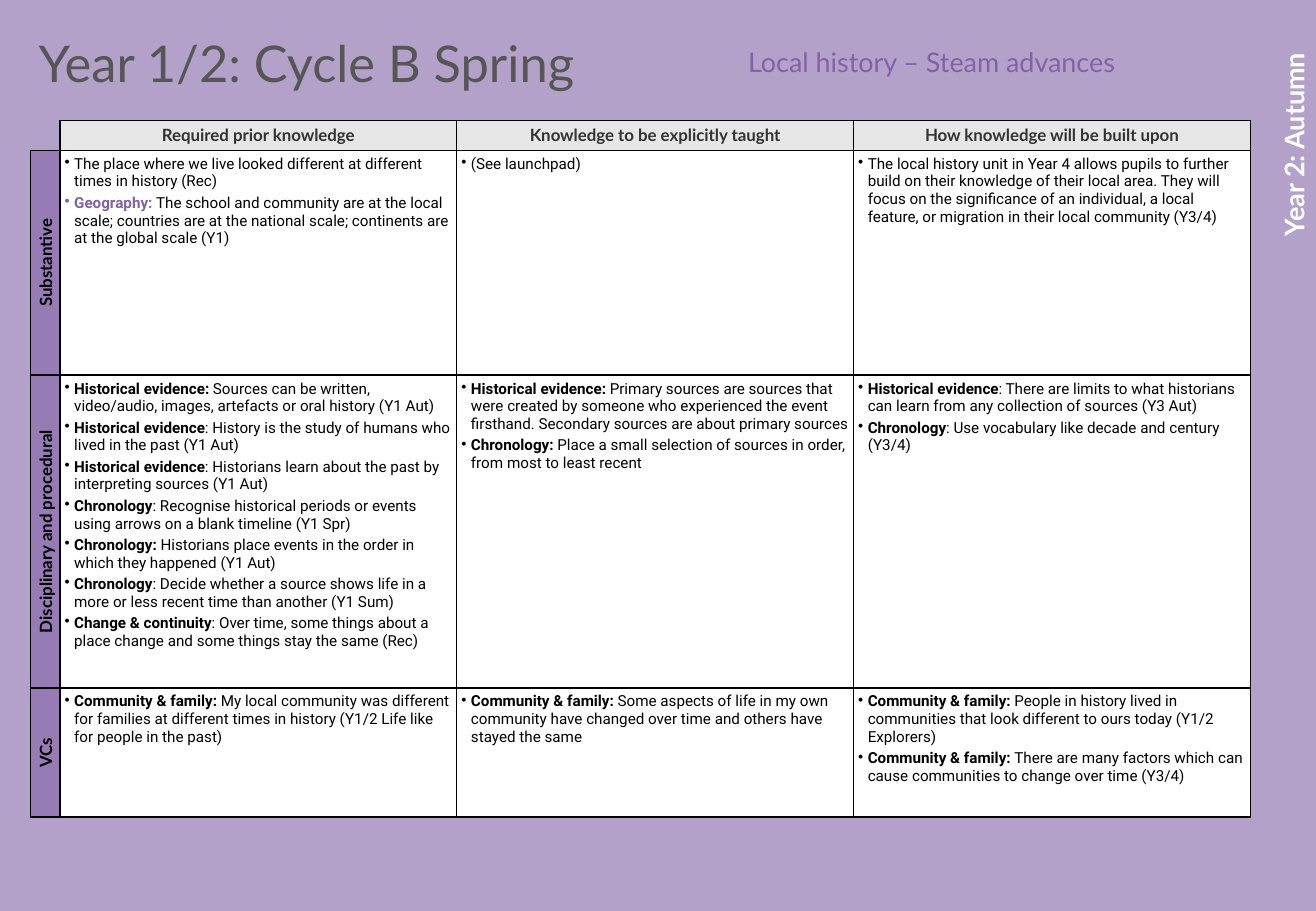
from lxml import etree
from pptx import Presentation
from pptx.dml.color import RGBColor
from pptx.enum.text import MSO_ANCHOR, PP_ALIGN
from pptx.oxml.ns import qn
from pptx.util import Pt

LEFT, CENTER, RIGHT = PP_ALIGN.LEFT, PP_ALIGN.CENTER, PP_ALIGN.RIGHT
MIDDLE = MSO_ANCHOR.MIDDLE

LILAC = RGBColor(0xB4, 0xA1, 0xCA)
PURPLE = RGBColor(0x82, 0x62, 0xA6)
TITLE_GREY = RGBColor(0x56, 0x56, 0x56)
HEADER_GREY = RGBColor(0x32, 0x32, 0x32)
HEADER_FILL = RGBColor(0xE6, 0xE6, 0xE6)
WHITE = RGBColor(0xFF, 0xFF, 0xFF)
BLACK = RGBColor(0, 0, 0)

CELL_MARGIN = Pt(2.83)
BULLET_INDENT = Pt(5.67)

# text, (left, top, width, height), rotation, alignment, size, colour, bold
HEADINGS = [
    ("Year 1/2: Cycle B Spring", (15.84, 18.72, 360.72, 36), 0, LEFT, 30, TITLE_GREY, False),
    ("Year 2: Autumn", (681.12, 73.44, 171.36, 24.48), 270, CENTER, 16, WHITE, True),
    ("Local history – Steam advances", (390.24, 18.72, 277.92, 36), 0, RIGHT, 16, PURPLE, False),
]

COLUMN_TITLES = ["Required prior knowledge", "Knowledge to be explicitly taught",
                 "How knowledge will be built upon"]

# strand, row height, three columns of (bold lead-in, statement)
STRANDS = [
    ("Substantive", 133.3, [
        [("", "The place where we live looked different at different times in history (Rec)"),
         ("Geography: ", "The school and community are at the local scale; countries are at the "
                         "national scale; continents are at the global scale (Y1)")],
        [("", "(See launchpad)")],
        [("", "The local history unit in Year 4 allows pupils to further build on their knowledge "
              "of their local area. They will focus on the significance of an individual, a local "
              "feature, or migration in their local community (Y3/4)")],
    ]),
    ("Disciplinary and procedural", 185.5, [
        [("Historical evidence: ", "Sources can be written, video/audio, images, artefacts or "
                                   "oral history (Y1 Aut)"),
         ("Historical evidence", ": History is the study of humans who lived in the past (Y1 Aut)"),
         ("Historical evidence", ": Historians learn about the past by interpreting sources (Y1 Aut)"),
         ("Chronology", ": Recognise historical periods or events using arrows on a blank "
                        "timeline (Y1 Spr)"),
         ("Chronology: ", "Historians place events in the order in which they happened (Y1 Aut)"),
         ("Chronology", ": Decide whether a source shows life in a more or less recent time than "
                        "another (Y1 Sum)"),
         ("Change & continuity", ": Over time, some things about a place change and some things "
                                 "stay the same (Rec)")],
        [("Historical evidence: ", "Primary sources are sources that were created by someone who "
                                   "experienced the event firsthand. Secondary sources are about "
                                   "primary sources"),
         ("Chronology: ", "Place a small selection of sources in order, from most to least recent")],
        [("Historical evidence", ": There are limits to what historians can learn from any "
                                 "collection of sources (Y3 Aut)"),
         ("Chronology", ": Use vocabulary like decade and century (Y3/4)")],
    ]),
    ("VCs", 76.5, [
        [("Community & family: ", "My local community was different for families at different "
                                  "times in history (Y1/2 Life like for people in the past)")],
        [("Community & family: ", "Some aspects of life in my own community have changed over "
                                  "time and others have stayed the same")],
        [("Community & family: ", "People in history lived in communities that look different to "
                                  "ours today (Y1/2 Explorers)"),
         ("Community & family: ", "There are many factors which can cause communities to change "
                                  "over time (Y3/4)")],
    ]),
]


def style_run(run, font_name, size, colour, bold):
    run.font.name = font_name
    run.font.size = Pt(size)
    run.font.color.rgb = colour
    run.font.bold = bold


def fill_label(cell, label, colour):
    """Write a centred bold row or column label."""
    cell.text_frame.text = label
    cell.vertical_anchor = MIDDLE
    paragraph = cell.text_frame.paragraphs[0]
    paragraph.alignment = CENTER
    style_run(paragraph.runs[0], "Lato", 10, colour, True)


prs = Presentation()
prs.slide_width, prs.slide_height = Pt(780), Pt(540)
slide = prs.slides.add_slide(prs.slide_layouts[6])
slide.background.fill.solid()
slide.background.fill.fore_color.rgb = LILAC

for text, place, rotation, alignment, size, colour, bold in HEADINGS:
    heading = slide.shapes.add_textbox(*[Pt(length) for length in place])
    heading.rotation = rotation
    frame = heading.text_frame
    frame.word_wrap = True
    frame.vertical_anchor = MIDDLE
    frame.text = text
    frame.paragraphs[0].alignment = alignment
    style_run(frame.paragraphs[0].runs[0], "Lato", size, colour, bold)

column_widths = [17.3] + [235.2] * 3
row_heights = [17.8] + [height for _, height, _ in STRANDS]
table = slide.shapes.add_table(
    len(row_heights), len(column_widths), Pt(18.2), Pt(71.3),
    Pt(sum(column_widths)), Pt(sum(row_heights))).table
table.first_row = False
table.horz_banding = False
for column, width in zip(table.columns, column_widths):
    column.width = Pt(width)
for row, height in zip(table.rows, row_heights):
    row.height = Pt(height)

corner = table.cell(0, 0)
for cell in table.iter_cells():
    cell.margin_left = cell.margin_right = CELL_MARGIN
    cell.margin_top = cell.margin_bottom = CELL_MARGIN
    properties = cell._tc.get_or_add_tcPr()
    for side in ("lnL", "lnR", "lnT", "lnB"):
        border = etree.SubElement(properties, qn(f"a:{side}"), w=str(Pt(1)))
        if cell == corner or cell._tc is corner._tc:
            if side in ("lnL", "lnT"):
                etree.SubElement(border, qn("a:noFill"))
                continue
        line_fill = etree.SubElement(border, qn("a:solidFill"))
        etree.SubElement(line_fill, qn("a:srgbClr"), val=str(BLACK))
    cell.fill.solid()
    cell.fill.fore_color.rgb = WHITE
corner.fill.background()
corner.text_frame.paragraphs[0].font.size = Pt(10)

for column_index, column_title in enumerate(COLUMN_TITLES, 1):
    header = table.cell(0, column_index)
    fill_label(header, column_title, HEADER_GREY)
    header.fill.fore_color.rgb = HEADER_FILL

for row_index, (strand, _, columns) in enumerate(STRANDS, 1):
    strand_cell = table.cell(row_index, 0)
    fill_label(strand_cell, strand, BLACK)
    strand_cell.fill.fore_color.rgb = PURPLE
    strand_properties = strand_cell._tc.tcPr
    strand_properties.set("vert", "vert270")
    fill_colour = strand_properties.find(f"{qn('a:solidFill')}/{qn('a:srgbClr')}")
    etree.SubElement(fill_colour, qn("a:alpha"), val="60000")

    for column_index, statements in enumerate(columns, 1):
        frame = table.cell(row_index, column_index).text_frame
        for index, (lead_in, statement) in enumerate(statements):
            paragraph = frame.paragraphs[0] if index == 0 else frame.add_paragraph()
            paragraph.space_after = Pt(2)
            bullet_properties = paragraph._p.get_or_add_pPr()
            bullet_properties.set("marL", str(BULLET_INDENT))
            bullet_properties.set("indent", str(-BULLET_INDENT))
            etree.SubElement(bullet_properties, qn("a:buChar"), char="•")
            if lead_in:
                run = paragraph.add_run()
                run.text = lead_in
                lead_colour = PURPLE if lead_in.startswith("Geography") else BLACK
                style_run(run, "Roboto", 9, lead_colour, True)
            run = paragraph.add_run()
            run.text = statement
            style_run(run, "Roboto", 9, BLACK, False)

prs.save("out.pptx")
